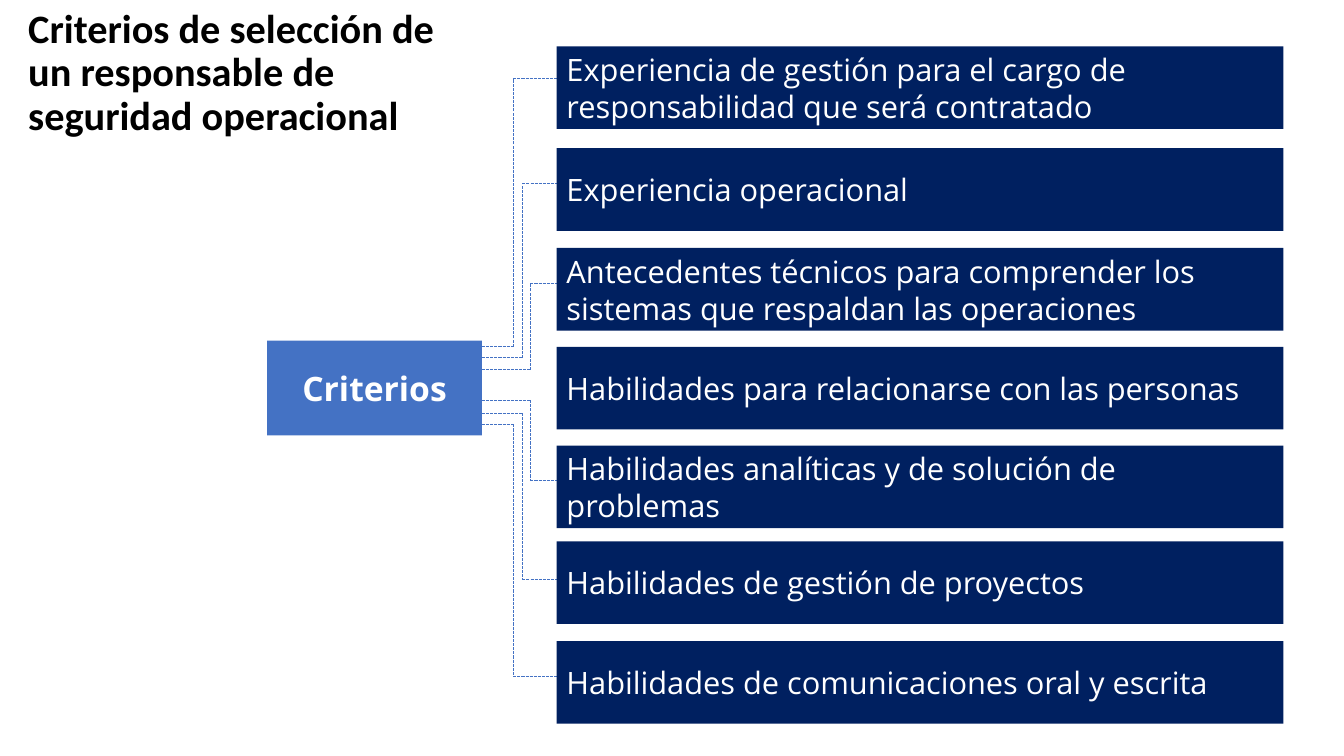
from lxml import etree
from pptx import Presentation
from pptx.dml.color import RGBColor
from pptx.enum.dml import MSO_LINE
from pptx.enum.shapes import MSO_CONNECTOR, MSO_SHAPE
from pptx.enum.text import MSO_ANCHOR, MSO_AUTO_SIZE, PP_ALIGN
from pptx.oxml.ns import qn
from pptx.util import Inches, Pt

STRAIGHT = MSO_CONNECTOR.STRAIGHT
RECTANGLE = MSO_SHAPE.RECTANGLE
DASH = MSO_LINE.SQUARE_DOT
LEFT, CENTER = PP_ALIGN.LEFT, PP_ALIGN.CENTER

# Content
TITLE = "Criterios de selección de un responsable de seguridad operacional"
HUB = "Criterios"
CRITERIA = [  # top of the bar, wording
    (0.46, "Experiencia de gestión para el cargo de responsabilidad que será contratado"),
    (1.47, "Experiencia operacional"),
    (2.46, "Antecedentes técnicos para comprender los sistemas que respaldan las operaciones"),
    (3.44, "Habilidades para relacionarse con las personas"),
    (4.42, "Habilidades analíticas y de solución de problemas"),
    (5.37, "Habilidades de gestión de proyectos"),
    (6.36, "Habilidades de comunicaciones oral y escrita"),
]
BRANCHES = [  # bend x, height at the hub, height at the bar
    (5.09, 3.44, 0.78),
    (5.18, 3.55, 1.82),
    (5.26, 3.67, 2.81),
    (5.26, 3.97, 4.77),
    (5.18, 4.10, 5.75),
    (5.09, 4.21, 6.71),
]

# Geometry and colours
HUB_LEFT, HUB_TOP, HUB_WIDTH, HUB_HEIGHT = 2.65, 3.38, 2.13, 0.94
BAR_LEFT, BAR_WIDTH, BAR_HEIGHT = 5.52, 7.21, 0.82
HUB_RIGHT = HUB_LEFT + HUB_WIDTH
BRANCH_END = 6.48
BLUE, NAVY, WHITE, BLACK = "4472C4", "002060", "FFFFFF", "000000"


def color(value):
    return RGBColor.from_string(value)


def style(para, name, size, value, bold=False):
    para.font.name = name
    para.font.size = Pt(size)
    para.font.bold = bold
    para.font.color.rgb = color(value)


def add_box(shapes, text, area, fill, size, align, bold=False):
    box = shapes.add_shape(RECTANGLE, *map(Inches, area))
    box.shadow.inherit = False
    box.fill.solid()
    box.fill.fore_color.rgb = color(fill)
    box.line.fill.background()
    frame = box.text_frame
    frame.word_wrap = True
    frame.vertical_anchor = MSO_ANCHOR.MIDDLE
    para = frame.paragraphs[0]
    para.text = text
    para.alignment = align
    style(para, "Open Sans", size, WHITE, bold)


def add_line(shapes, start, end):
    line = shapes.add_connector(STRAIGHT, *map(Inches, start + end))
    line.line.color.rgb = color(BLUE)
    line.line.width = Pt(0.75)
    line.line.dash_style = DASH
    etree.SubElement(line._element.spPr, qn("a:effectLst"))


deck = Presentation()
deck.slide_width, deck.slide_height = Inches(13.33), Inches(7.5)
page = deck.slides.add_slide(deck.slide_layouts[5])

# Title
title = page.shapes.title
title.left, title.top = Inches(0.18), Inches(0.11)
title.width, title.height = Inches(4.35), Inches(1.32)
title.text_frame.word_wrap = True
title.text_frame.auto_size = MSO_AUTO_SIZE.NONE
title.text_frame.vertical_anchor = MSO_ANCHOR.BOTTOM
heading = title.text_frame.paragraphs[0]
heading.text = TITLE
heading.alignment = LEFT
heading.line_spacing = 0.9
style(heading, "Calibri", 28.8, BLACK, True)

# Hub
add_box(page.shapes, HUB, (HUB_LEFT, HUB_TOP, HUB_WIDTH, HUB_HEIGHT),
        BLUE, 24, CENTER, True)

# Dashed branches, each running hub, bend, bar
branches = page.shapes.add_group_shape().shapes
for bend, hub_y, bar_y in BRANCHES:
    points = [(HUB_RIGHT, hub_y), (bend, hub_y), (bend, bar_y), (BRANCH_END, bar_y)]
    for start, end in zip(points, points[1:]):
        add_line(branches, start, end)

# Criteria bars
bars = page.shapes.add_group_shape().shapes
for top, text in CRITERIA:
    add_box(bars, text, (BAR_LEFT, top, BAR_WIDTH, BAR_HEIGHT), NAVY, 22, LEFT)

deck.save("out.pptx")
